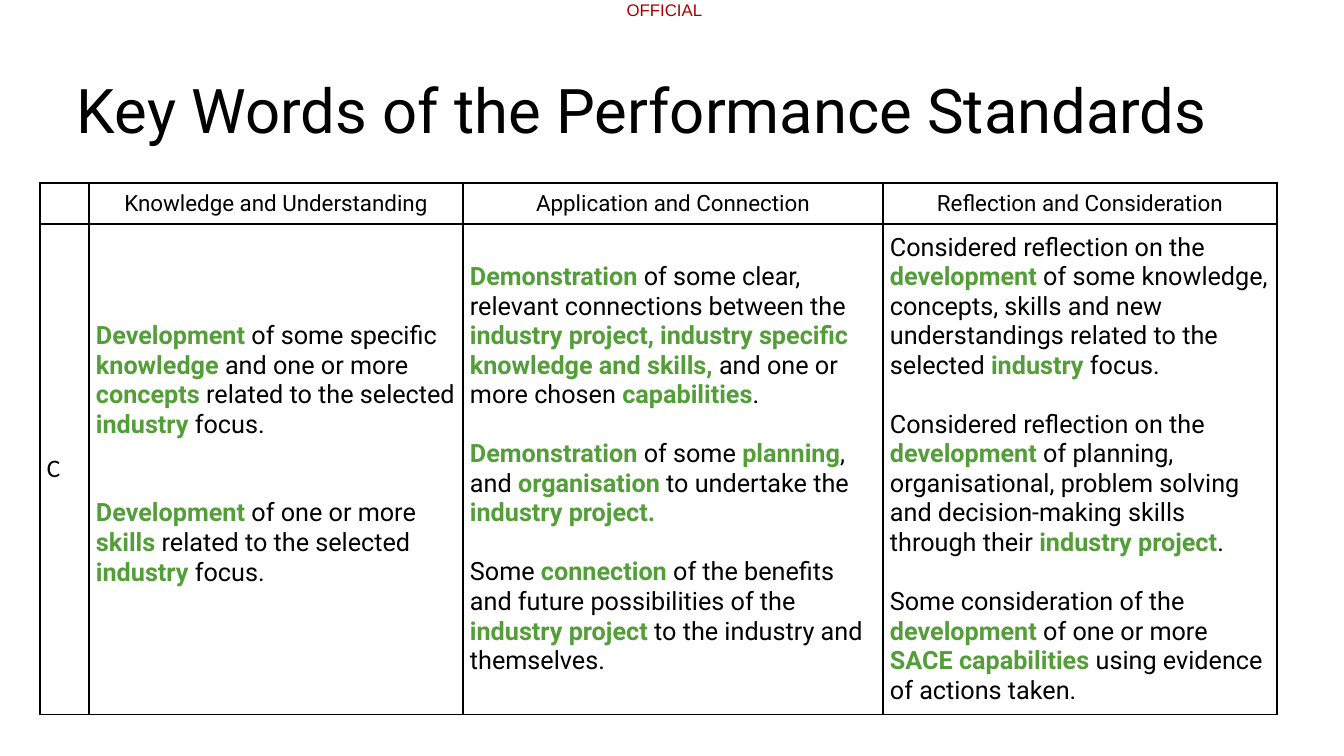
from pptx import Presentation
from pptx.dml.color import RGBColor
from pptx.enum.text import MSO_ANCHOR as Anchor, PP_ALIGN as Align
from pptx.oxml import parse_xml
from pptx.oxml.ns import nsdecls
from pptx.util import Emu, Pt

BLACK = RGBColor(0, 0, 0)
GREEN = RGBColor(0x54, 0x9E, 0x39)
RED = RGBColor(0xA8, 0, 0)
BODY = "Roboto"
LINE = 21  # height in points of one line of body text


def px(n):
    return Emu(round(n * 914400 / 100.8))


def write(para, text, size, face=BODY, color=BLACK):
    """Add text to a paragraph; words between asterisks are bold and green."""
    for i, part in enumerate(text.split("*")):
        if part:
            run = para.add_run()
            run.text = part
            key = i % 2 == 1
            for name, value in {"size": Pt(size), "name": face, "bold": key}.items():
                setattr(run.font, name, value)
            run.font.color.rgb = GREEN if key else color


deck = Presentation()
deck.slide_width, deck.slide_height = px(1344), px(756)
slide = deck.slides.add_slide(deck.slide_layouts[6])

# Marking at the top edge
mark = slide.shapes.add_textbox(px(624), 0, px(81), px(20)).text_frame
mark.margin_left = mark.margin_right = mark.margin_top = mark.margin_bottom = 0
mark.word_wrap = False
mark.paragraphs[0].alignment = Align.CENTER
write(mark.paragraphs[0], "OFFICIAL", 12, "Arial", RED)

# Title
title = slide.shapes.add_textbox(px(67), px(40), px(1184), px(148)).text_frame
title.word_wrap = True
title.vertical_anchor = Anchor.MIDDLE
title.paragraphs[0].line_spacing = 0.9
write(title.paragraphs[0], "Key Words of the Performance Standards", 44)

# Table content: each column has a heading, lines between paragraphs, paragraphs
COLS = [
    (49, "", 0, ["C"]),
    (374, "Knowledge and Understanding", 2, [
        "*Development* of some specific *knowledge* and one or more *concepts* "
        "related to the selected *industry* focus.",
        "*Development* of one or more *skills* related to the selected "
        "*industry* focus.",
    ]),
    (420, "Application and Connection", 1, [
        "*Demonstration* of some clear, relevant connections between the "
        "*industry project, industry specific knowledge and skills,* and one or "
        "more chosen *capabilities*.",
        "*Demonstration* of some *planning*, and *organisation* to undertake the "
        "*industry project.*",
        "Some *connection* of the benefits and future possibilities of the "
        "*industry project *to the industry and themselves.",
    ]),
    (394, "Reflection and Consideration", 1, [
        "Considered reflection on the *development* of some knowledge, concepts, "
        "skills and new understandings related to the selected *industry* focus.",
        "Considered reflection on the *development* of planning, organisational, "
        "problem solving and decision-making skills through their "
        "*industry project*.",
        "Some consideration of the *development* of one or more "
        "*SACE capabilities *using evidence of actions taken.",
    ]),
]
ROWS = [41, 482]

# Table grid
width = sum(col[0] for col in COLS)
table = slide.shapes.add_table(
    len(ROWS), len(COLS), px(40), px(183), px(width), px(sum(ROWS))).table
table.first_row = table.horz_banding = False
for row, high in zip(table.rows, ROWS):
    row.height = px(high)

# Table text
for c, (wide, head, gap, body) in enumerate(COLS):
    table.columns[c].width = px(wide)
    top, main = table.cell(0, c), table.cell(1, c)
    if head:
        top.text_frame.paragraphs[0].alignment = Align.CENTER
        write(top.text_frame.paragraphs[0], head, 16)
    for i, text in enumerate(body):
        frame = main.text_frame
        para = frame.add_paragraph() if i else frame.paragraphs[0]
        if i:
            para.space_before = Pt(gap * LINE)
        write(para, text, 18, BODY if head else "Calibri")

# Cell margins, borders and fill
for cell in table.iter_cells():
    cell.vertical_anchor = Anchor.MIDDLE
    cell.margin_left = cell.margin_right = px(7)
    cell.margin_top = cell.margin_bottom = px(4)
    props = cell._tc.get_or_add_tcPr()
    for side in "LRTB":
        props.append(parse_xml(
            f'<a:ln{side} {nsdecls("a")} w="{Pt(1)}"><a:solidFill>'
            f'<a:srgbClr val="{BLACK}"/></a:solidFill></a:ln{side}>'))
    cell.fill.background()
# The second column sits one line above the middle
table.cell(1, 1).margin_bottom = px(4) + Pt(LINE)

deck.save("out.pptx")
